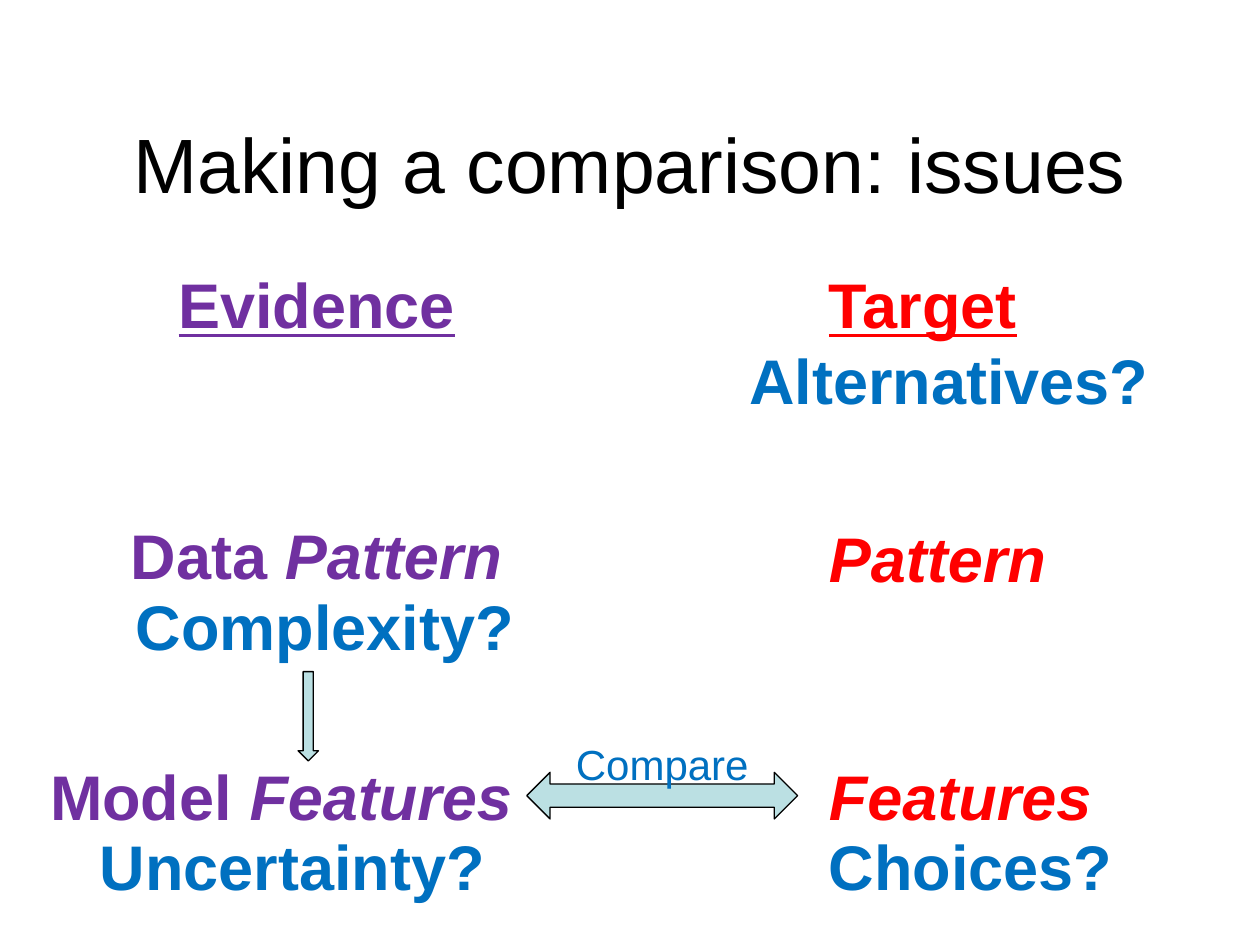
from pptx import Presentation
from pptx.dml.color import RGBColor
from pptx.enum.shapes import MSO_SHAPE
from pptx.enum.text import MSO_ANCHOR, PP_ALIGN
from pptx.util import Cm, Pt

BLACK = RGBColor(0x00, 0x00, 0x00)
BLUE = RGBColor(0x00, 0x70, 0xC0)
PURPLE = RGBColor(0x70, 0x30, 0xA0)
RED = RGBColor(0xFF, 0x00, 0x00)
TEAL = RGBColor(0xBB, 0xE0, 0xE3)

ROW = 1.8  # height of a label
HEAD = {"underline": True}
SLANT = {"italic": True}
PLAIN = {}


def add_text(slide, box, runs, color, size=36, bold=True, align=PP_ALIGN.LEFT,
             wrap=False, anchor=MSO_ANCHOR.TOP):
    """Place one line of text; runs are (words, font values) pairs."""
    frame = slide.shapes.add_textbox(*map(Cm, box)).text_frame
    frame.word_wrap = wrap
    frame.vertical_anchor = anchor
    line = frame.paragraphs[0]
    line.alignment = align
    for words, extra in runs:
        run = line.add_run()
        run.text = words
        style = {"name": "Arial", "size": Pt(size), "bold": bold, **extra}
        for key, value in style.items():
            setattr(run.font, key, value)
        run.font.color.rgb = color


def add_arrow(slide, kind, box):
    arrow = slide.shapes.add_shape(kind, *map(Cm, box))
    arrow.shadow.inherit = False
    arrow.fill.solid()
    arrow.fill.fore_color.rgb = TEAL
    arrow.line.color.rgb = BLACK
    arrow.line.width = Pt(0.75)


def add_labels(slide, left, top, labels):
    """Labels are (x, y, width, color, runs), from the column's corner."""
    for x, y, width, color, runs in labels:
        add_text(slide, (left + x, top + y, width, ROW), runs, color)


def add_title(slide, box):
    add_text(slide, box, [("Making a comparison: issues", PLAIN)], BLACK, size=44,
             bold=False, align=PP_ALIGN.CENTER, wrap=True, anchor=MSO_ANCHOR.MIDDLE)


def add_evidence(slide, left, top):
    add_labels(slide, left, top, [
        (2.59, 0, 6.15, PURPLE, [("Evidence", HEAD)]),
        (1.63, 5.06, 8.08, PURPLE, [("Data ", PLAIN), ("Pattern", SLANT)]),
        (1.73, 6.48, 8.2, BLUE, [("Complexity?", PLAIN)]),
        (0, 9.91, 9.91, PURPLE, [("Model ", PLAIN), ("Features", SLANT)]),
        (1, 11.33, 8.36, BLUE, [("Uncertainty?", PLAIN)]),
    ])
    # From data down to model
    add_arrow(slide, MSO_SHAPE.DOWN_ARROW, (left + 5.25, top + 8.31, 0.41, ROW))


def add_target(slide, left, top):
    add_labels(slide, left, top, [
        (1.6, 0, 4.34, RED, [("Target", HEAD)]),
        (0, 1.53, 8.64, BLUE, [("Alternatives?", PLAIN)]),
        (1.6, 5.11, 4.93, RED, [("Pattern", SLANT)]),
        (1.6, 9.91, 5.87, RED, [("Features", SLANT)]),
        (1.6, 11.33, 6.27, BLUE, [("Choices?", PLAIN)]),
    ])


def add_link(slide, left, top, width):
    """Two-way arrow with its caption centred above."""
    add_arrow(slide, MSO_SHAPE.LEFT_RIGHT_ARROW, (left, top + 0.81, width, 0.94))
    cap = 4.04
    add_text(slide, (left + (width - cap) / 2, top, cap, 1.27),
             [("Compare", PLAIN)], BLUE, size=24, bold=False, align=PP_ALIGN.CENTER)


def main():
    deck = Presentation()
    deck.slide_width, deck.slide_height = Cm(25.4), Cm(19.05)
    slide = deck.slides.add_slide(deck.slide_layouts[6])
    add_title(slide, (1.9, 1.7, 21.6, 3.18))
    add_evidence(slide, 0.76, 5.23)
    add_target(slide, 14.86, 5.23)
    add_link(slide, 10.62, 14.76, 5.46)
    deck.save("out.pptx")


if __name__ == "__main__":
    main()
